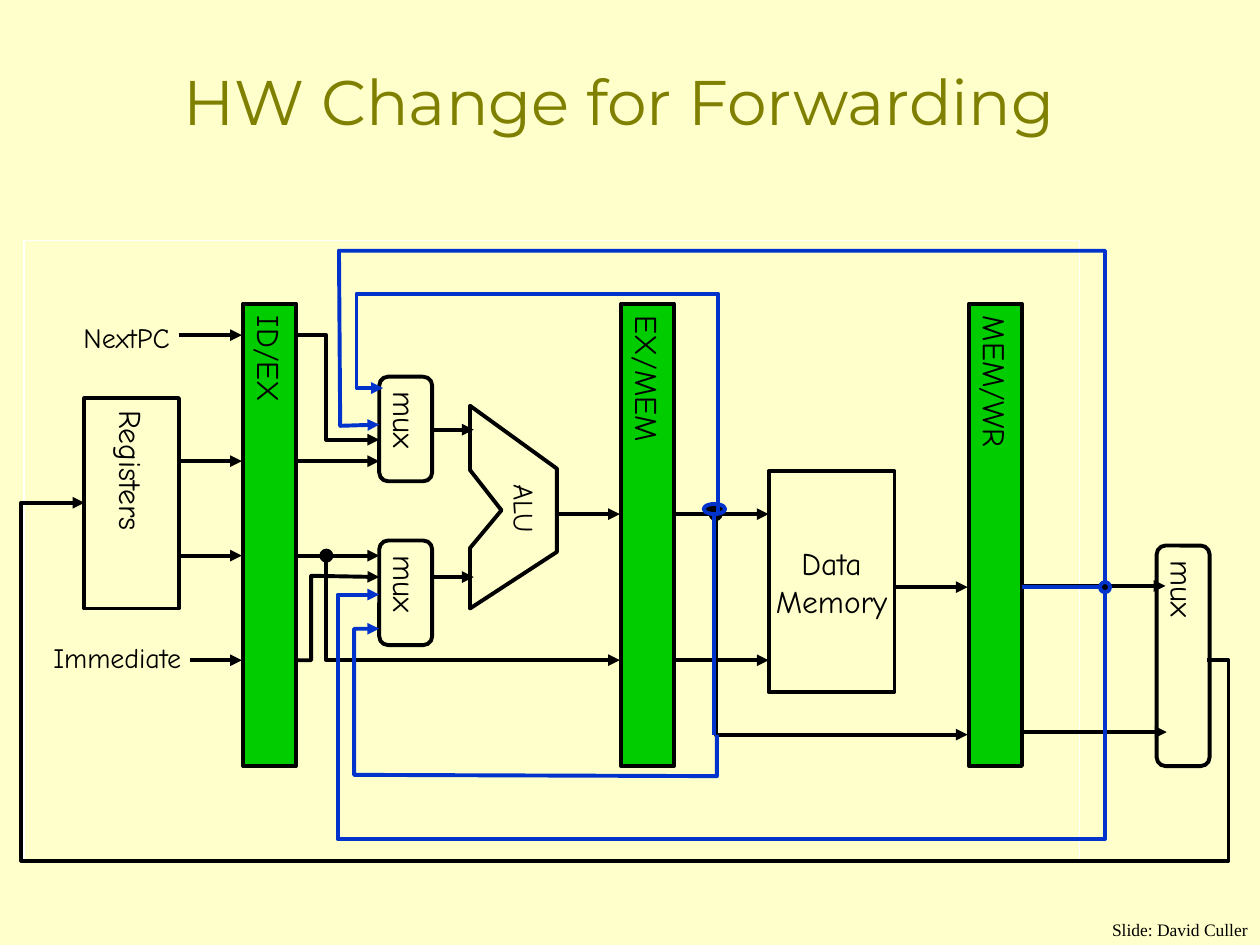
from lxml import etree
from pptx import Presentation
from pptx import util as u
from pptx.dml.color import RGBColor
from pptx.enum import shapes, text
from pptx.oxml.ns import qn

BLACK, BLUE, GREEN = "000000", "0033CC", "00CC00"
OLIVE, CREAM, WHITE = "808000", "FFFFCC", "FFFFFE"
RECT = shapes.MSO_SHAPE.RECTANGLE
ROUNDED = shapes.MSO_SHAPE.ROUNDED_RECTANGLE
OVAL = shapes.MSO_SHAPE.OVAL
CENTER, RIGHT = text.PP_ALIGN.CENTER, text.PP_ALIGN.RIGHT
MIDDLE, TOP = text.MSO_ANCHOR.MIDDLE, text.MSO_ANCHOR.TOP


def rgb(value):
    return RGBColor.from_string(value)


def inches(*values):
    return [u.Inches(value) for value in values]


class Diagram:
    font, size, weight = "Comic Neue", 18, 2.25

    def __init__(self, slide):
        self.slide = slide
        self.shapes = slide.shapes

    def stroke(self, item, color, arrow=False, weight=weight):
        item.line.color.rgb = rgb(color)
        item.line.width = u.Pt(weight)
        if arrow:
            line = item.line._get_or_add_ln()
            etree.SubElement(line, qn("a:tailEnd"), type="triangle")

    def set_text(self, item, words, size=size, font=font, color=BLACK,
                 align=CENTER, anchor=MIDDLE, wrap=False, vertical=False):
        frame = item.text_frame
        frame.text = words
        frame.word_wrap = wrap
        frame.vertical_anchor = anchor
        if vertical:
            frame._txBody.bodyPr.set("vert", "eaVert")
        for paragraph in frame.paragraphs:
            paragraph.alignment = align
            paragraph.font.size = u.Pt(size)
            paragraph.font.name = font
            paragraph.font.color.rgb = rgb(color)

    def label(self, words, place, turn=0, **style):
        item = self.shapes.add_textbox(*inches(*place))
        item.rotation = turn
        self.set_text(item, words, **style)
        return item

    def box(self, place, words="", kind=RECT, fill=None, line=BLACK,
            weight=weight, vertical=True):
        item = self.shapes.add_shape(kind, *inches(*place))
        item.shadow.inherit = False
        if fill:
            item.fill.solid()
            item.fill.fore_color.rgb = rgb(fill)
        else:
            item.fill.background()
        self.stroke(item, line, weight=weight)
        if words:
            self.set_text(item, words, vertical=vertical)

    def dot(self, x, y, line=BLACK, width=0.08):
        self.box((x - width / 2, y - 0.04, width, 0.08), kind=OVAL,
                 fill=BLACK, line=line)

    def wire(self, start, end, color=BLACK, arrow=True):
        item = self.shapes.add_connector(
            shapes.MSO_CONNECTOR.STRAIGHT, *inches(*start, *end))
        self.stroke(item, color, arrow)
        etree.SubElement(item._element.spPr, qn("a:effectLst"))

    def route(self, points, color=BLACK, closed=False):
        start, *rest = [inches(*point) for point in points]
        builder = self.shapes.build_freeform(*start)
        builder.add_line_segments(rest, close=closed)
        item = builder.convert_to_shape()
        item.shadow.inherit = False
        item.fill.background()
        self.stroke(item, color, arrow=not closed)


def main():
    deck = Presentation()
    deck.slide_width, deck.slide_height = inches(10, 7.5)
    slide = deck.slides.add_slide(deck.slide_layouts[6])
    slide.background.fill.solid()
    slide.background.fill.fore_color.rgb = rgb(CREAM)
    d = Diagram(slide)

    # Title and diagram frame
    d.label("HW Change for Forwarding", (0.58, 0.17, 8.67, 1.25), size=36,
            font="Montserrat", color=OLIVE, wrap=True)
    d.box((0.19, 1.91, 8.38, 4.93), line=WHITE, weight=0)

    # Pipeline registers
    for left, stage in ((7.69, "MEM/WR"), (1.93, "ID/EX"), (4.93, "EX/MEM")):
        d.box((left, 2.41, 0.42, 3.67), stage, fill=GREEN)

    # Memory, ALU, operand muxes and register file
    d.box((6.1, 3.74, 1, 1.75), "Data\nMemory", vertical=False)
    d.route([(3.73, 3.22), (4.42, 3.72), (4.42, 4.38), (3.73, 4.83),
             (3.73, 4.35), (3.98, 4.05), (3.73, 3.73)], closed=True)
    d.label("ALU", (3.84, 3.85, 0.65, 0.37), turn=90, size=16)
    for top in (2.99, 4.29):
        d.box((3.01, top, 0.42, 0.83), "mux", ROUNDED)
    d.box((0.67, 3.16, 0.75, 1.67), "Registers")

    # Inputs
    d.label("NextPC", (0.51, 2.49, 0.99, 0.37), size=16)
    d.label("Immediate", (0.27, 5.03, 1.32, 0.37), size=16)

    # Straight data wires: left, right, height
    for left, right, y in (
            (3.42, 3.76, 3.41), (3.42, 3.76, 4.58),
            (1.42, 1.92, 3.66), (1.42, 1.92, 4.41),
            (2.34, 3.01, 3.66), (2.34, 3.01, 4.41),
            (1.42, 1.92, 2.66), (1.51, 1.92, 5.24),
            (5.34, 6.1, 5.24), (4.42, 4.92, 4.08),
            (5.34, 6.1, 4.08), (7.1, 7.68, 4.66),
            (8.13, 9.26, 5.81), (8.11, 9.25, 4.65)):
        d.wire((left, y), (right, y))

    # Bent data wires and their junctions
    d.route([(2.34, 2.66), (2.59, 2.66), (2.59, 3.49), (3.01, 3.49)])
    d.route([(2.34, 5.24), (2.47, 5.24), (2.47, 4.57), (3.01, 4.58)])
    d.route([(2.59, 4.41), (2.59, 5.24), (4.92, 5.24)])
    d.route([(5.68, 4.08), (5.68, 5.83), (7.68, 5.83)])
    d.dot(5.68, 4.08)
    d.dot(2.59, 4.41)

    # Forwarding from MEM/WR
    d.route([(8.77, 4.66), (8.77, 1.99), (2.69, 1.99), (2.7, 3.38),
             (3.01, 3.37)], BLUE)
    d.route([(8.11, 4.66), (8.77, 4.66), (8.77, 6.66), (2.68, 6.66),
             (2.68, 4.72), (3.01, 4.72)], BLUE)
    d.dot(8.77, 4.66, BLUE)

    # Write-back mux and its return to the register file
    d.box((9.18, 4.33, 0.42, 1.75), "mux", ROUNDED)
    d.route([(9.58, 5.24), (9.75, 5.24), (9.75, 6.83), (0.17, 6.83),
             (0.17, 3.99), (0.67, 3.99)])

    # Forwarding from EX/MEM
    d.route([(5.69, 5.83), (5.69, 6.16), (2.81, 6.15), (2.81, 4.99),
             (3.01, 4.99)], BLUE)
    d.dot(5.67, 4.04, BLUE, width=0.17)
    d.route([(5.7, 4.08), (5.7, 2.33), (2.83, 2.33), (2.83, 3.08),
             (3.04, 3.08)], BLUE)
    d.wire((5.67, 5.83), (5.67, 4.08), BLUE, arrow=False)

    # Credit
    credit = d.label("Slide: David Culler", (8.72, 7.33, 1.28, 0.17), size=10,
                     font="Times New Roman", align=RIGHT, anchor=TOP)
    credit.text_frame.paragraphs[0].line_spacing = 0.4

    deck.save("out.pptx")


if __name__ == "__main__":
    main()
